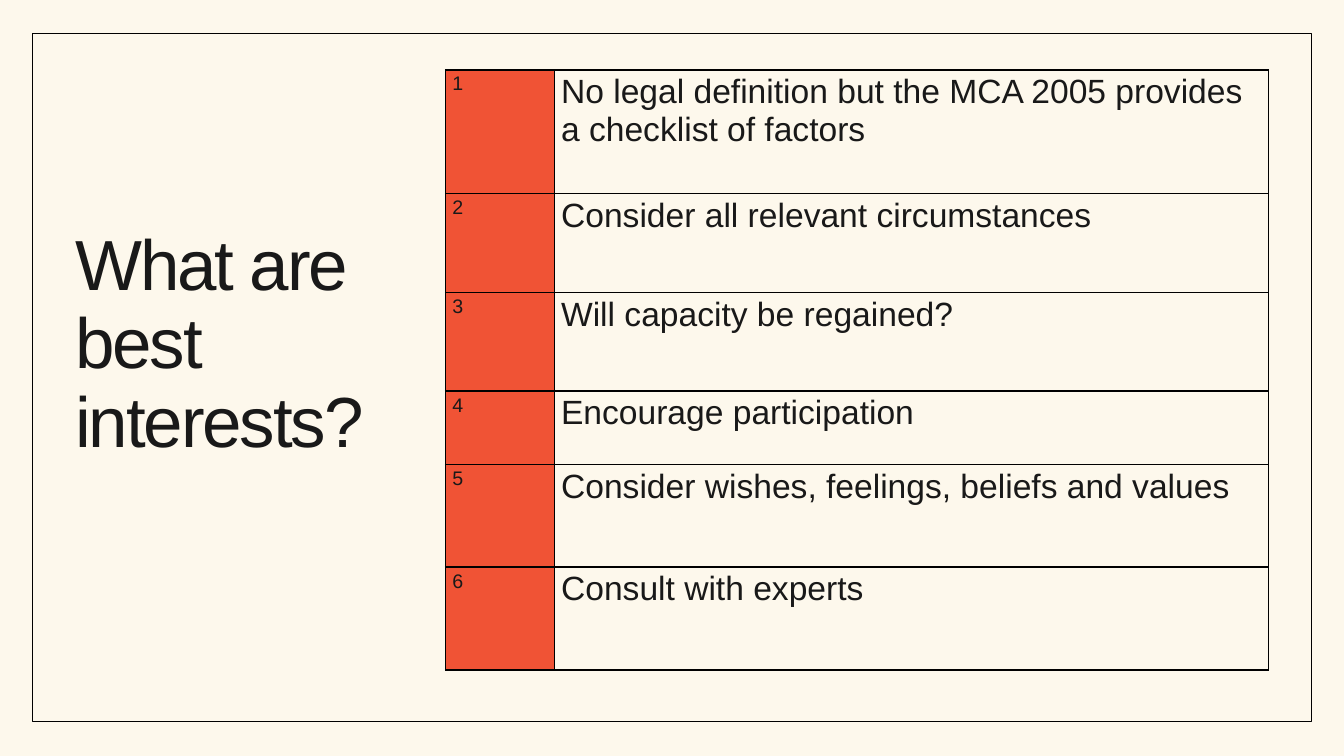
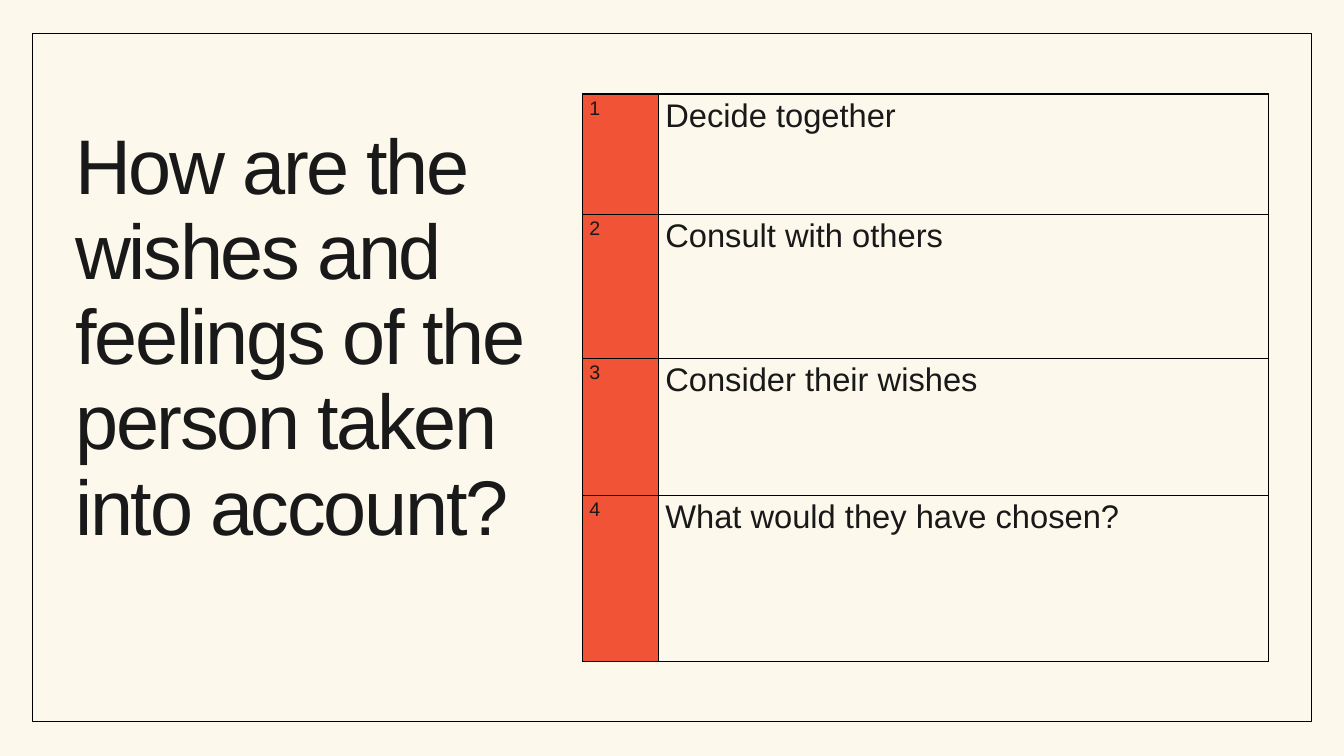
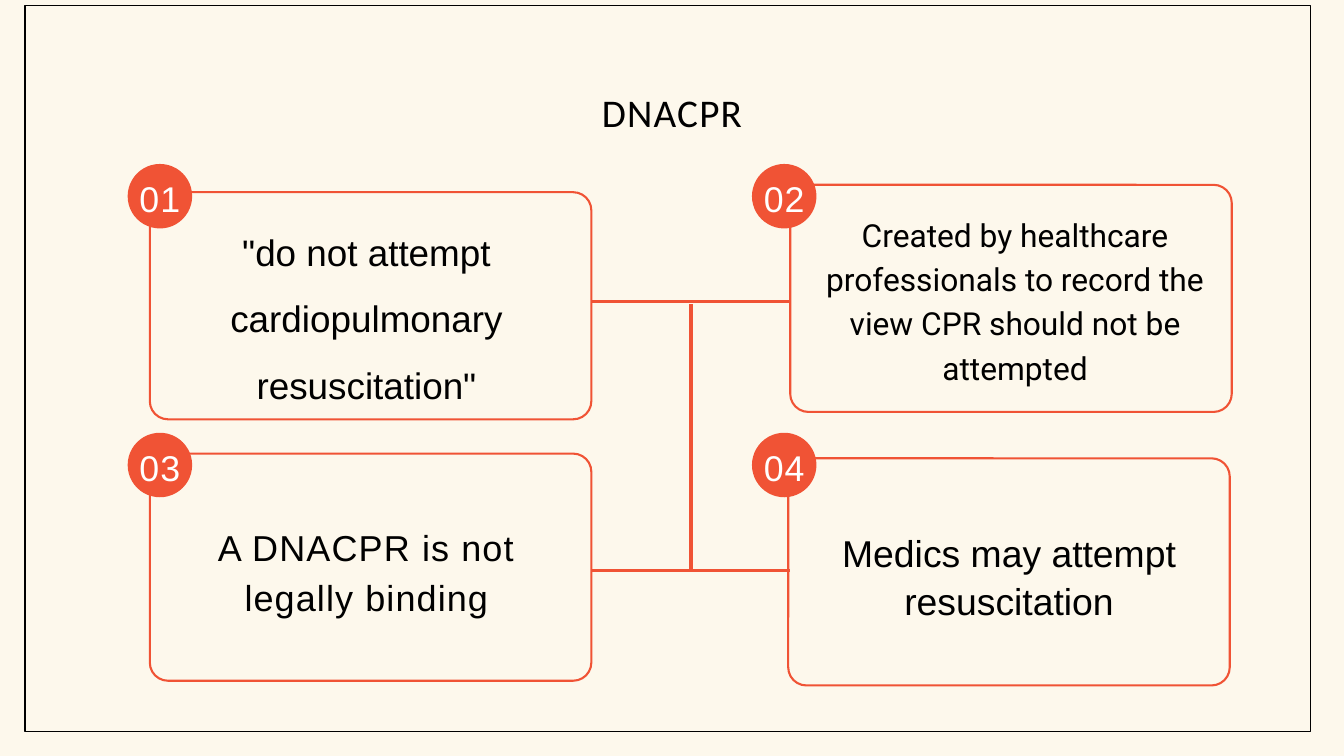
"""Build three slides on best interests, personal wishes and DNACPR."""
import dataclasses
import typing

import lxml.etree
import pptx
import pptx.dml.color
import pptx.enum.shapes
import pptx.enum.text
import pptx.oxml.ns
import pptx.util

Inches = pptx.util.Inches
Pt = pptx.util.Pt
Align = pptx.enum.text.PP_ALIGN
Anchor = pptx.enum.text.MSO_ANCHOR
Form = pptx.enum.shapes.MSO_SHAPE


class Box(typing.NamedTuple):
    left: float
    top: float
    width: float
    height: float

    def place(self) -> list[int]:
        return [Inches(side) for side in self]


@dataclasses.dataclass(frozen=True)
class Theme:
    cream: str = "FDF8EC"
    red: str = "F05335"
    ink: str = "191919"
    black: str = "000000"
    white: str = "FFFFFF"
    font: str = "Arial"
    rule: float = 1.5
    edge: float = 2.25
    link: float = 3.75
    index: float = 21
    badge: float = 38.3


@dataclasses.dataclass(frozen=True)
class Head:
    text: str
    box: Box
    style: dict[str, typing.Any]


@dataclasses.dataclass(frozen=True)
class Grid:
    left: float
    top: float
    cols: tuple[float, float]
    rows: list[tuple[float, str]]
    size: float


@dataclasses.dataclass(frozen=True)
class Card:
    left: float
    top: float
    text: str
    label: Box
    style: dict[str, typing.Any]


THEME = Theme()
FRAME = Box(0.48, 0.5, 19.04, 10.24)
WIDE = Box(0.37, 0.08, 19.13, 10.81)
CARD = (6.57, 3.38)
BADGE = 0.96
BADGES = [(left, top) for top in (2.44, 6.44) for left in (1.9, 11.19)]
LINKS = [(8.8, 4.49, 11.76, 4.49), (8.8, 8.49, 11.76, 8.49), (10.28, 8.48, 10.28, 4.53)]

TABLES = [
    (
        Head("What are\nbest interests?", Box(1.12, 3.38, 5.5, 3.49),
             {"size": 76, "lead": Pt(83.6), "space": -2.3}),
        Grid(6.63, 1.04, (1.62, 10.63), [
            (1.84, "No legal definition but the MCA 2005 provides a checklist of factors"),
            (1.47, "Consider all relevant circumstances"),
            (1.47, "Will capacity be regained?"),
            (1.09, "Encourage participation"),
            (1.53, "Consider wishes, feelings, beliefs and values"),
            (1.53, "Consult with experts"),
        ], 36),
    ),
    (
        Head("How are the wishes and feelings of the person taken into account?",
             Box(1.12, 1.86, 6.84, 7.6), {"size": 83, "lead": Pt(91.2), "space": -2.5}),
        Grid(8.67, 1.4, (1.13, 9.08), [
            (1.79, "Decide together"),
            (2.14, "Consult with others"),
            (2.05, "Consider their wishes"),
            (2.47, "What would they have chosen?"),
        ], 35),
    ),
]

TOPIC = Head("DNACPR", Box(2.67, 1.2, 14.66, 0.78),
             {"size": 42, "lead": Pt(58.8), "space": 1.3, "font": "Calibri",
              "color": THEME.black, "align": Align.CENTER})

CARDS = [
    Card(2.23, 2.86, '"do not attempt cardiopulmonary resuscitation"',
         Box(2.17, 3.09, 6.57, 2.87), {"size": 39.5, "lead": 1.5}),
    Card(11.76, 2.75,
         "Created by healthcare professionals to record the view CPR should not be attempted",
         Box(12.01, 3.11, 6.19, 2.65), {"size": 34, "lead": Pt(47.6), "font": "Roboto"}),
    Card(2.23, 6.75, "A DNACPR is not legally binding",
         Box(2.72, 7.71, 5.47, 1.44), {"size": 38.6, "lead": Pt(54), "space": 1.2}),
    Card(11.73, 6.82, "Medics may attempt resuscitation",
         Box(12, 6.85, 6.03, 3.41), {"size": 40, "lead": Pt(52), "anchor": Anchor.MIDDLE}),
]


def tint(code: str) -> pptx.dml.color.RGBColor:
    return pptx.dml.color.RGBColor.from_string(code)


def write(frame, text: str, *, size: float, font: str = THEME.font, color: str = THEME.ink,
          align=Align.LEFT, lead=None, space: float = 0) -> None:
    for count, line in enumerate(text.split("\n")):
        para = frame.add_paragraph() if count else frame.paragraphs[0]
        para.alignment = align
        if lead:
            para.line_spacing = lead
        run = para.add_run()
        run.text = line
        run.font.size = Pt(size)
        run.font.name = font
        run.font.color.rgb = tint(color)
        if space:
            run._r.get_or_add_rPr().set("spc", str(round(space * 100)))


def fit(frame, anchor=Anchor.TOP) -> None:
    frame.word_wrap = True
    frame.auto_size = pptx.enum.text.MSO_AUTO_SIZE.NONE
    frame.vertical_anchor = anchor
    frame.margin_left = frame.margin_right = frame.margin_top = frame.margin_bottom = 0


def label(slide, text: str, box: Box, anchor=Anchor.TOP, **style) -> None:
    frame = slide.shapes.add_textbox(*box.place()).text_frame
    fit(frame, anchor)
    write(frame, text, align=Align.CENTER, **style)


def block(slide, form, box: Box, fill: str, line: str = "", width: float = 0):
    shape = slide.shapes.add_shape(form, *box.place())
    shape.shadow.inherit = False
    shape.fill.solid()
    shape.fill.fore_color.rgb = tint(fill)
    if line:
        shape.line.color.rgb = tint(line)
        shape.line.width = Pt(width)
    else:
        shape.line.fill.background()
    return shape


def link(slide, ends: tuple[float, float, float, float]) -> None:
    line = slide.shapes.add_connector(
        pptx.enum.shapes.MSO_CONNECTOR.STRAIGHT, *[Inches(end) for end in ends])
    line.line.color.rgb = tint(THEME.red)
    line.line.width = Pt(THEME.link)
    lxml.etree.SubElement(line.element.spPr, pptx.oxml.ns.qn("a:effectLst"))


def border(cell) -> None:
    props = cell._tc.get_or_add_tcPr()
    for spot, side in enumerate(("a:lnL", "a:lnR", "a:lnT", "a:lnB")):
        line = lxml.etree.Element(pptx.oxml.ns.qn(side), w=str(Pt(THEME.rule)))
        fill = lxml.etree.SubElement(line, pptx.oxml.ns.qn("a:solidFill"))
        lxml.etree.SubElement(fill, pptx.oxml.ns.qn("a:srgbClr"), val=THEME.black)
        props.insert(spot, line)


def table(slide, grid: Grid) -> None:
    box = Box(grid.left, grid.top, sum(grid.cols), sum(tall for tall, _ in grid.rows))
    chart = slide.shapes.add_table(len(grid.rows), len(grid.cols), *box.place()).table
    chart.first_row = chart.horz_banding = False
    for col, wide in zip(chart.columns, grid.cols):
        col.width = Inches(wide)
    for count, (tall, text) in enumerate(grid.rows):
        chart.rows[count].height = Inches(tall)
        mark, body = chart.cell(count, 0), chart.cell(count, 1)
        mark.fill.solid()
        mark.fill.fore_color.rgb = tint(THEME.red)
        body.fill.background()
        write(mark.text_frame, str(count + 1), size=THEME.index)
        write(body.text_frame, text, size=grid.size)
        border(mark)
        border(body)


def start(deck, head: Head, frame: Box):
    slide = deck.slides.add_slide(deck.slide_layouts[5])
    slide.background.fill.solid()
    slide.background.fill.fore_color.rgb = tint(THEME.cream)
    block(slide, Form.RECTANGLE, frame, THEME.cream, THEME.black, THEME.rule)
    title = slide.shapes.title
    title.left, title.top, title.width, title.height = head.box.place()
    fit(title.text_frame)
    write(title.text_frame, head.text, **head.style)
    title.element.getparent().append(title.element)
    return slide


def cards(slide) -> None:
    for card in CARDS:
        shape = block(slide, Form.ROUNDED_RECTANGLE, Box(card.left, card.top, *CARD),
                      THEME.cream, THEME.red, THEME.edge)
        shape.adjustments[0] = 0.08
        label(slide, card.text, card.label, color=THEME.black, **card.style)
    for ends in LINKS:
        link(slide, ends)
    for count, (left, top) in enumerate(BADGES, 1):
        block(slide, Form.OVAL, Box(left, top, BADGE, BADGE), THEME.red)
        label(slide, f"{count:02}", Box(left + 0.05, top + 0.09, BADGE - 0.1, 0.71),
              size=THEME.badge, color=THEME.white, lead=Pt(53.7), space=1.2)


def main() -> None:
    deck = pptx.Presentation()
    deck.slide_width, deck.slide_height = Inches(20), Inches(11.25)
    for head, grid in TABLES:
        table(start(deck, head, FRAME), grid)
    cards(start(deck, TOPIC, WIDE))
    deck.save("out.pptx")


if __name__ == "__main__":
    main()
